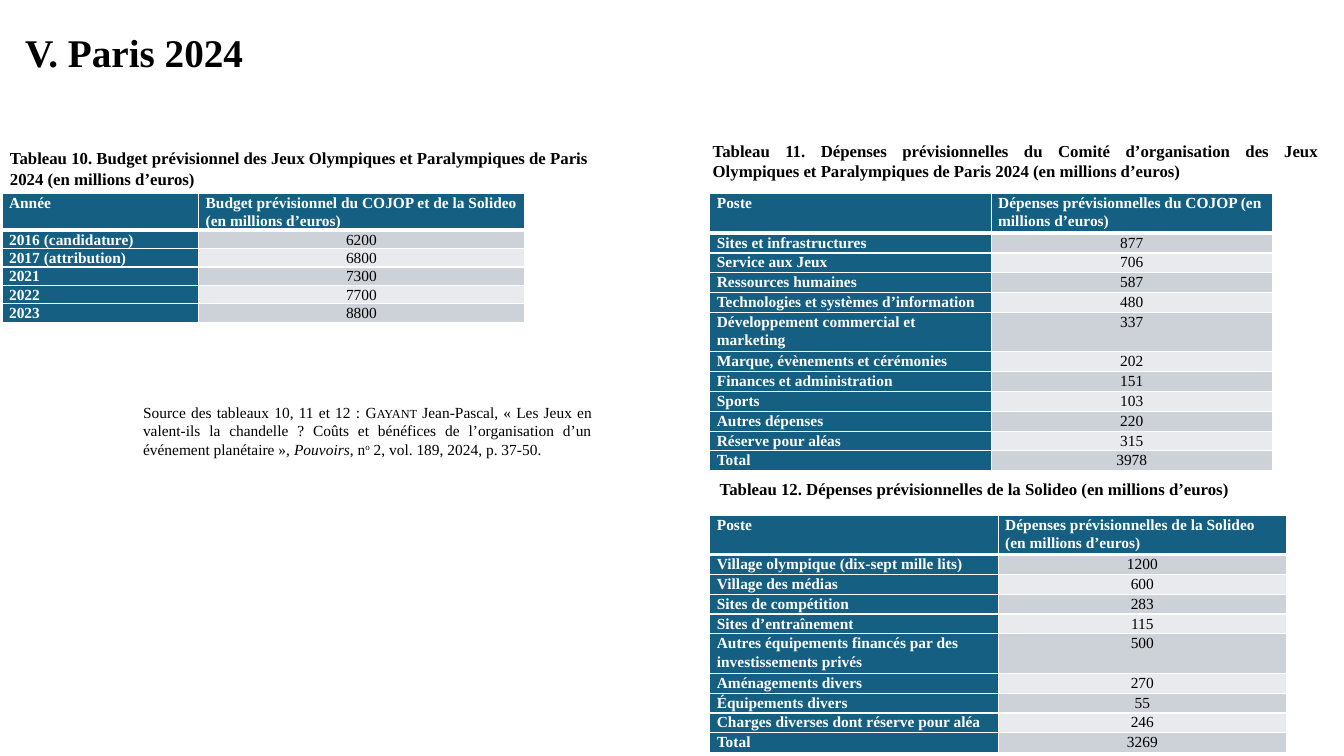
from dataclasses import dataclass

from lxml.etree import SubElement
from pptx import Presentation
from pptx.dml.color import RGBColor
from pptx.enum.text import MSO_ANCHOR as Anchor, PP_ALIGN as Align
from pptx.oxml.ns import qn
from pptx.util import Inches, Pt


@dataclass(frozen=True)
class Theme:
    font: str = "Times New Roman"
    ink: str = "000000"
    paper: str = "FFFFFF"
    accent: str = "156082"
    bands: tuple = ("CCD2D8", "E8EAED")
    title: int = 28
    caption: int = 12
    body: int = 11
    rule: int = 1
    header_rule: int = 3


THEME = Theme()
WIDTH, HEIGHT = 13.33, 7.5

TITLE = "V. Paris 2024"
TITLE_BOX = (0.15, 0.23, 10.09, 0.57)

TABLES = [
    {
        "caption": "Tableau 10. Budget prévisionnel des Jeux Olympiques et Paralympiques de Paris 2024 (en millions d’euros)",
        "caption_box": (0, 1.42, 6.12, 0.5),
        "align": Align.LEFT,
        "corner": (0.02, 1.92),
        "columns": (1.95, 3.23),
        "height": 1.26,
        "tall_rows": (0,),
        "rows": [
            ("Année", "Budget prévisionnel du COJOP et de la Solideo (en millions d’euros)"),
            ("2016 (candidature)", 6200),
            ("2017 (attribution)", 6800),
            ("2021", 7300),
            ("2022", 7700),
            ("2023", 8800),
        ],
    },
    {
        "caption": "Tableau 11. Dépenses prévisionnelles du Comité d’organisation des Jeux Olympiques et Paralympiques de Paris 2024 (en millions d’euros)",
        "caption_box": (6.97, 1.35, 6.21, 0.5),
        "align": Align.JUSTIFY,
        "corner": (7.04, 1.92),
        "columns": (2.79, 2.79),
        "height": 2.74,
        "tall_rows": (0, 5),
        "rows": [
            ("Poste", "Dépenses prévisionnelles du COJOP (en millions d’euros)"),
            ("Sites et infrastructures", 877),
            ("Service aux Jeux", 706),
            ("Ressources humaines", 587),
            ("Technologies et systèmes d’information", 480),
            ("Développement commercial et marketing", 337),
            ("Marque, évènements et cérémonies", 202),
            ("Finances et administration", 151),
            ("Sports", 103),
            ("Autres dépenses", 220),
            ("Réserve pour aléas", 315),
            ("Total", 3978),
        ],
    },
    {
        "caption": "Tableau 12. Dépenses prévisionnelles de la Solideo (en millions d’euros)",
        "caption_box": (7.04, 4.7, 5.87, 0.3),
        "align": Align.LEFT,
        "corner": (7.04, 5.11),
        "columns": (2.86, 2.86),
        "height": 2.35,
        "tall_rows": (0, 5),
        "rows": [
            ("Poste", "Dépenses prévisionnelles de la Solideo (en millions d’euros)"),
            ("Village olympique (dix-sept mille lits)", 1200),
            ("Village des médias", 600),
            ("Sites de compétition", 283),
            ("Sites d’entraînement", 115),
            ("Autres équipements financés par des investissements privés", 500),
            ("Aménagements divers", 270),
            ("Équipements divers", 55),
            ("Charges diverses dont réserve pour aléa", 246),
            ("Total", 3269),
        ],
    },
]

SOURCE_BOX = (1.32, 3.95, 4.65, 0.66)
SOURCE = [
    ("Source des tableaux 10, 11 et 12 : ", {}),
    ("Gayant", {"cap": "small"}),
    (" Jean-Pascal, « Les Jeux en valent-ils la chandelle ? Coûts et bénéfices de l’organisation d’un événement planétaire », ", {}),
    ("Pouvoirs", {"i": "1"}),
    (", n", {}),
    ("o", {"baseline": "30000"}),
    (" 2, vol. 189, 2024, p. 37‑50.", {}),
]


def write(frame, runs, size=THEME.body, color=THEME.ink, bold=False,
          align=Align.LEFT, spacing=None, after=None):
    frame.word_wrap = True
    paragraph = frame.paragraphs[0]
    paragraph.alignment = align
    paragraph.line_spacing = spacing
    paragraph.space_after = after
    for words, marks in [(runs, {})] if isinstance(runs, str) else runs:
        run = paragraph.add_run()
        run.text = words
        run.font.name = THEME.font
        run.font.size = Pt(size)
        run.font.bold = bold
        run.font.color.rgb = RGBColor.from_string(color)
        for mark, value in marks.items():
            run.font._element.set(mark, value)


def add_text(slide, box, runs, **style):
    write(slide.shapes.add_textbox(*map(Inches, box)).text_frame, runs, **style)


def paint(cell, fill, top, bottom):
    properties = cell._tc.get_or_add_tcPr()
    sides = {"lnL": THEME.rule, "lnR": THEME.rule, "lnT": top, "lnB": bottom}
    for side, weight in sides.items():
        line = SubElement(properties, qn(f"a:{side}"), w=str(Pt(weight)))
        SubElement(SubElement(line, qn("a:solidFill")), qn("a:srgbClr"), val=THEME.paper)
    cell.fill.solid()
    cell.fill.fore_color.rgb = RGBColor.from_string(fill)


def add_budget(slide, budget):
    rows, columns, tall = budget["rows"], budget["columns"], budget["tall_rows"]
    line_height = budget["height"] / (len(rows) + len(tall))
    box = (*budget["corner"], sum(columns), budget["height"])
    table = slide.shapes.add_table(len(rows), len(columns), *map(Inches, box)).table
    table.horz_banding = False
    for column, width in zip(table.columns, columns):
        column.width = Inches(width)
    for r, entries in enumerate(rows):
        table.rows[r].height = Inches(line_height * (2 if r in tall else 1))
        top = THEME.header_rule if r == 1 else THEME.rule
        bottom = THEME.header_rule if r == 0 else THEME.rule
        for c, entry in enumerate(entries):
            cell = table.cell(r, c)
            label = r == 0 or c == 0
            cell.margin_left = cell.margin_right = Inches(0.07)
            cell.margin_top = cell.margin_bottom = 0
            paint(cell, THEME.accent if label else THEME.bands[(r - 1) % 2], top, bottom)
            write(cell.text_frame, str(entry), bold=label,
                  color=THEME.paper if label else THEME.ink,
                  align=Align.LEFT if label else Align.CENTER,
                  spacing=1.07, after=Pt(8))
    add_text(slide, budget["caption_box"], budget["caption"],
             size=THEME.caption, bold=True, align=budget["align"])


def main():
    deck = Presentation()
    deck.slide_width, deck.slide_height = Inches(WIDTH), Inches(HEIGHT)
    slide = deck.slides.add_slide(deck.slide_layouts.get_by_name("Title Only"))
    heading = slide.shapes.title
    heading.left, heading.top, heading.width, heading.height = map(Inches, TITLE_BOX)
    heading.text_frame.vertical_anchor = Anchor.TOP
    write(heading.text_frame, TITLE, size=THEME.title, bold=True)
    for budget in TABLES:
        add_budget(slide, budget)
    add_text(slide, SOURCE_BOX, SOURCE, align=Align.JUSTIFY)
    deck.save("out.pptx")


if __name__ == "__main__":
    main()
